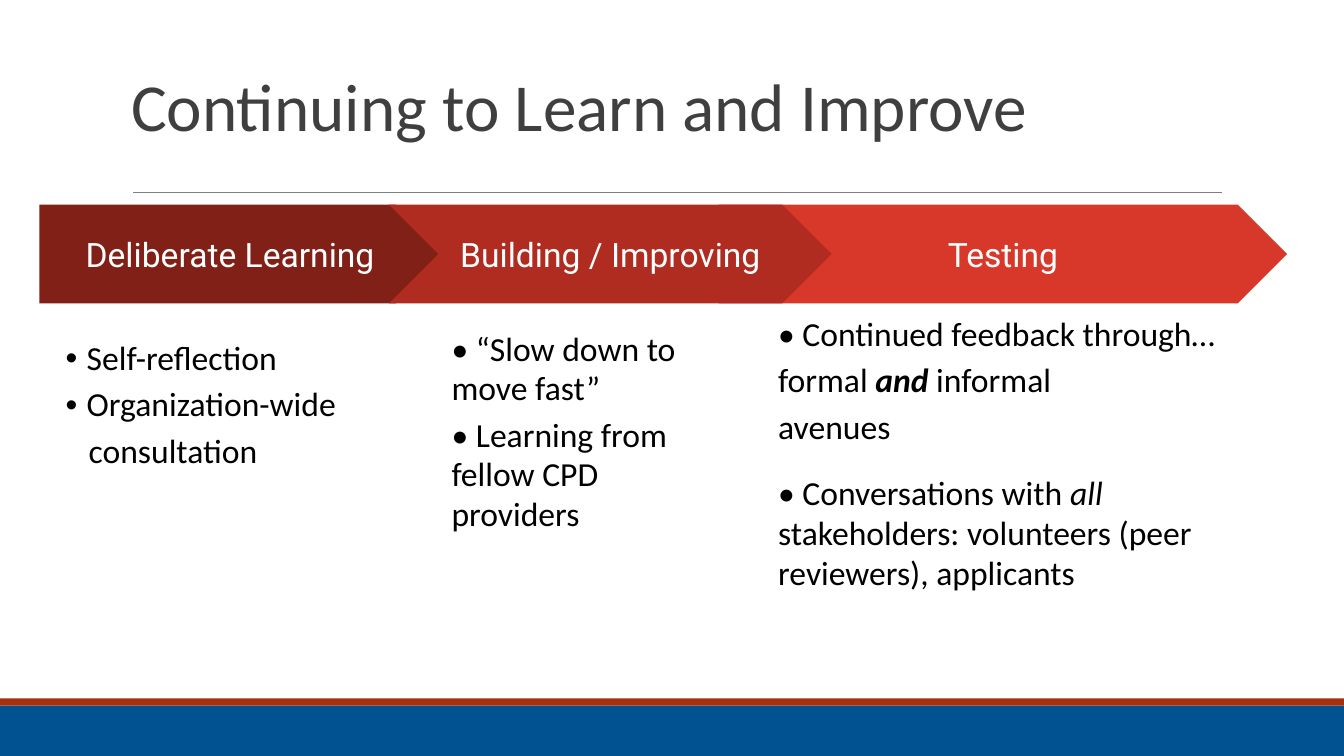
from lxml.etree import SubElement
from pptx import Presentation
from pptx.dml.color import RGBColor
from pptx.enum.shapes import MSO_CONNECTOR as Connector, MSO_SHAPE as Shape
from pptx.enum.text import MSO_ANCHOR as Anchor, MSO_AUTO_SIZE as AutoSize, PP_ALIGN as Align
from pptx.oxml.ns import qn
from pptx.util import Inches, Pt

COLUMNS, ROWS = 40, 30
LEFT, CENTER = Align.LEFT, Align.CENTER
BULLET, HANGING, FLUSH = (0.21, -0.21), (0.23, 0), (0, 0)
PLAIN, ITALIC, STRONG = {}, {"italic": True}, {"bold": True, "italic": True}

ARROWS = [
    ("Testing", Shape.CHEVRON, 21.39, 16.92, "D83829"),
    ("Deliberate Learning", Shape.PENTAGON, 1.17, 12.09, "802017"),
    ("Building / Improving", Shape.CHEVRON, 11.58, 13.17, "B02C20"),
]
LISTS = [
    ((1.65, 13.04, 9.84, 13.12), 0.1, [
        (BULLET, 5, [("Self-reflection", PLAIN)]),
        (BULLET, 5, [("Organization-wide", PLAIN)]),
        (HANGING, 5, [("consultation", PLAIN)]),
    ]),
    ((13.05, 12.56, 8.91, 15.24), 0.13, [
        (FLUSH, 5, [("• “Slow down to move fast”", PLAIN)]),
        (FLUSH, 5, [("• Learning from fellow CPD providers", PLAIN)]),
    ]),
    ((22.77, 11.96, 14.13, 15.24), 0.13, [
        (FLUSH, 5, [("• Continued feedback through…", PLAIN)]),
        (FLUSH, 5, [("formal ", PLAIN), ("and", STRONG), (" informal", PLAIN)]),
        (FLUSH, 5, [("avenues", PLAIN)]),
        (FLUSH, 19.5, [("• Conversations with ", PLAIN), ("all ", ITALIC),
                       ("stakeholders: volunteers (peer reviewers), applicants", PLAIN)]),
    ]),
]


def color(value):
    """Turn a hex string into a colour."""
    return RGBColor.from_string(value)


def assign(target, values):
    """Set every attribute named in a dict of format values."""
    for name, value in values.items():
        setattr(target, name, value)


class Painter:
    """Hold the deck's style and current page, and draw elements on it."""

    def __init__(self, deck, layout):
        """Add a page and fix the size of a grid cell."""
        self.page = deck.slides.add_slide(deck.slide_layouts[layout])
        self.column = deck.slide_width / COLUMNS
        self.row = deck.slide_height / ROWS
        self.heading = {"name": "Calibri", "size": Pt(48), "bold": False}
        self.label = {"name": "Roboto", "size": Pt(24)}
        self.body = {"name": "Calibri", "size": Pt(24), "bold": False, "italic": False}

    def area(self, left, top, width, height):
        """Convert columns and rows into lengths."""
        return (int(left * self.column), int(top * self.row),
                int(width * self.column), int(height * self.row))

    def place(self, box, area):
        """Move a placeholder to an area of the grid."""
        assign(box, dict(zip(("left", "top", "width", "height"), self.area(*area))))

    def frame(self, box, anchor, side, end):
        """Set anchor, wrapping and insets of a text frame."""
        assign(box.text_frame, {
            "word_wrap": True, "auto_size": AutoSize.NONE, "vertical_anchor": anchor,
            "margin_left": Inches(side), "margin_right": Inches(side),
            "margin_top": Inches(end), "margin_bottom": Inches(end)})
        return box.text_frame

    def span(self, para, text, style, fill):
        """Add a run with its font."""
        span = para.add_run()
        span.text = text
        assign(span.font, style)
        span.font.color.rgb = color(fill)

    def title(self, text, area):
        """Fill the title placeholder."""
        box = self.page.shapes.title
        self.place(box, area)
        para = self.frame(box, Anchor.MIDDLE, 0.1, 0.05).paragraphs[0]
        assign(para, {"alignment": LEFT, "line_spacing": 0.85})
        self.span(para, text, self.heading, "3F3F3F")

    def shape(self, kind, area, fill):
        """Add a flat shape without outline."""
        box = self.page.shapes.add_shape(kind, *self.area(*area))
        box.shadow.inherit = False
        box.fill.solid()
        box.fill.fore_color.rgb = color(fill)
        box.line.fill.background()
        return box

    def arrow(self, text, kind, area, fill):
        """Add a labelled step of the process."""
        box = self.shape(kind, area, fill)
        box.adjustments[0] = 0.5
        para = self.frame(box, Anchor.MIDDLE, 0.13, 0.13).paragraphs[0]
        para.alignment = CENTER
        self.span(para, text, self.label, "FFFFFF")

    def rule(self, left, right, top):
        """Add a thin horizontal line."""
        start, level, end, _ = self.area(left, top, right, 0)
        line = self.page.shapes.add_connector(Connector.STRAIGHT, start, level, end, level)
        line.line.color.rgb = color("7F7F7F")
        line.line.width = Pt(0.75)
        SubElement(line._element.spPr, qn("a:effectLst"))

    def list(self, box, area, inset, items):
        """Fill a body placeholder with paragraphs."""
        self.place(box, area)
        frame = self.frame(box, Anchor.TOP, inset, inset)
        for index, (margins, gap, spans) in enumerate(items):
            para = frame.add_paragraph() if index else frame.paragraphs[0]
            assign(para, {"alignment": LEFT, "line_spacing": 0.98,
                          "space_before": Pt(gap), "space_after": Pt(0)})
            self.bullet(para, margins)
            for text, style in spans:
                self.span(para, text, {**self.body, **style}, "000000")

    def bullet(self, para, margins):
        """Set the indents and show or hide the bullet."""
        props = para._p.get_or_add_pPr()
        for name, value in zip(("marL", "indent"), margins):
            props.set(name, str(Inches(value)))
        if margins == BULLET:
            SubElement(props, qn("a:buFont"), typeface="Arial")
            SubElement(props, qn("a:buChar"), char="•")
        else:
            SubElement(props, qn("a:buNone"))


def main():
    """Build the slide and save it."""
    deck = Presentation()
    assign(deck, {"slide_width": Inches(13.33), "slide_height": Inches(7.5)})
    painter = Painter(deck, 4)
    painter.shape(Shape.RECTANGLE, (0, 28, COLUMNS, 2), "005390")
    painter.shape(Shape.RECTANGLE, (0, 27.72, COLUMNS, 0.28), "A5300F")
    painter.rule(3.96, 36.36, 7.64)
    painter.title("Continuing to Learn and Improve", (3.6, 1.24, 33, 6.36))
    for text, kind, left, width, fill in ARROWS:
        painter.arrow(text, kind, (left, 8.12, width, 3.92), fill)
    bodies = list(painter.page.placeholders)[1:]
    for box, (area, inset, items) in zip(bodies, LISTS):
        painter.list(box, area, inset, items)
    for box in bodies[len(LISTS):]:
        box._element.getparent().remove(box._element)
    deck.save("out.pptx")


if __name__ == "__main__":
    main()
